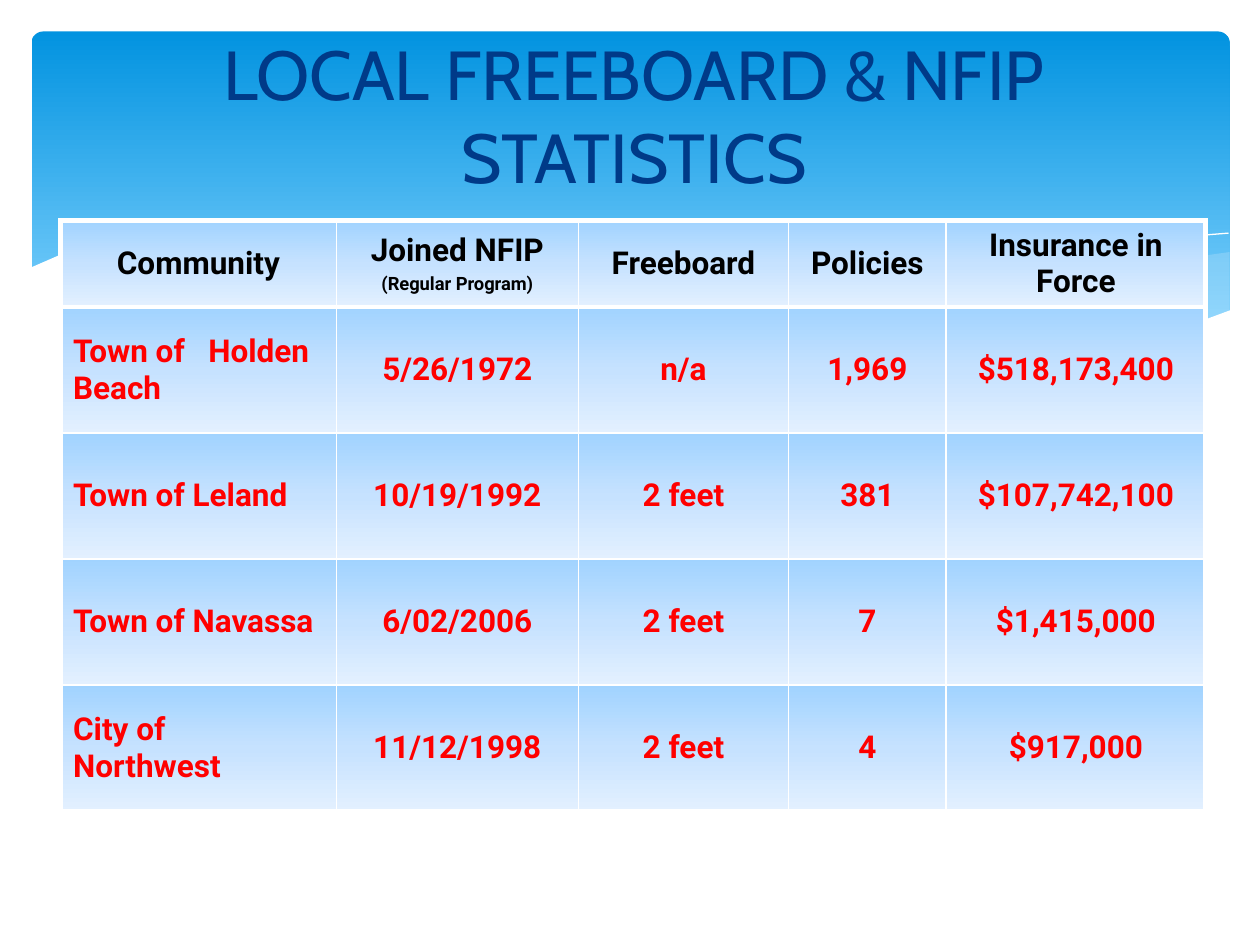
from dataclasses import dataclass
from lxml import etree
from pptx import Presentation
from pptx import util as u
from pptx.dml.color import RGBColor
from pptx.enum import shapes, text
from pptx.oxml import ns


@dataclass(frozen=True)
class Theme:
    white: str = "FFFFFF"
    wave: str = "C6E7FC"
    navy: str = "003A88"
    black: str = "000000"
    red: str = "FF0000"
    sky: tuple = ((0, "0293E0"), (90, "83D3FE"))
    ice: tuple = ((0, "A1D3FF"), (50, "C6E2FF"), (100, "E3F0FF"))
    head: str = "Cabin"
    body: str = "Roboto"
    big: float = 39.6
    mid: float = 18
    small: float = 10.5
    thin: float = 1
    thick: float = 3


def rgb(code):
    return RGBColor.from_string(code)


def apply(item, form):
    for key, val in form.items():
        setattr(item, key, val)


def sub(node, tag, **atts):
    return etree.SubElement(node, ns.qn(tag), **atts)


class Deck:
    def __init__(self, theme):
        self.theme = theme
        self.prs = Presentation()
        apply(self.prs, {"slide_width": u.Inches(10), "slide_height": u.Inches(7.5)})
        self.slide = self.prs.slides.add_slide(self.prs.slide_layouts[5])

    def shade(self, fill, node, stops):
        """Vertical gradient, top to bottom."""
        fill.gradient()
        fill.gradient_angle = 270
        box = node.find(".//" + ns.qn("a:gsLst"))
        for old in list(box):
            box.remove(old)
        for pos, code in stops:
            stop = sub(box, "a:gs", pos=str(pos * 1000))
            sub(stop, "a:srgbClr", val=code)

    def label(self, para, words, size, color, font, bold, align):
        run = para.add_run()
        run.text = words
        apply(run.font, {"size": u.Pt(size), "name": font, "bold": bold})
        run.font.color.rgb = rgb(color)
        para.alignment = align

    def panel(self, left, top, wide, high, round_, stops):
        item = self.slide.shapes.add_shape(
            shapes.MSO_SHAPE.ROUNDED_RECTANGLE,
            *map(u.Inches, (left, top, wide, high)))
        item.adjustments[0] = round_
        item.shadow.inherit = False
        item.line.fill.background()
        self.shade(item.fill, item._element, stops)

    def curve(self, points, fill=None, alpha=100):
        """Filled outline, or an open white hairline when fill is None."""
        dots = [(u.Inches(x), u.Inches(y)) for x, y in points]
        pen = self.slide.shapes.build_freeform(*dots[0])
        pen.add_line_segments(dots[1:], close=fill is not None)
        item = pen.convert_to_shape()
        item.shadow.inherit = False
        if fill is None:
            item.fill.background()
            item.line.color.rgb = rgb(self.theme.white)
            item.line.width = 0
            return
        item.line.fill.background()
        item.fill.solid()
        item.fill.fore_color.rgb = rgb(fill)
        if alpha < 100:
            tint = item._element.spPr.find(".//" + ns.qn("a:srgbClr"))
            sub(tint, "a:alpha", val=str(alpha * 1000))

    def title(self, words, left, top, wide, high):
        th, item = self.theme, self.slide.shapes.title
        apply(item, dict(zip(("left", "top", "width", "height"),
                             map(u.Inches, (left, top, wide, high)))))
        apply(item.text_frame, {"word_wrap": True,
                                "auto_size": text.MSO_AUTO_SIZE.NONE,
                                "vertical_anchor": text.MSO_ANCHOR.MIDDLE})
        para = item.text_frame.paragraphs[0]
        self.label(para, words, th.big, th.navy, th.head, False, text.PP_ALIGN.CENTER)
        para._p.get_or_add_pPr().set("marL", str(u.Inches(0.06)))
        # Bring the title in front of the backdrop
        self.slide.shapes._spTree.append(item._element)

    def edges(self, cell, widths):
        props = cell._tc.get_or_add_tcPr()
        for spot, (side, width) in enumerate(widths.items()):
            line = etree.Element(ns.qn("a:ln" + side), w=str(u.Pt(width)))
            sub(sub(line, "a:solidFill"), "a:srgbClr", val=self.theme.white)
            props.insert(spot, line)

    def table(self, rows, left, top, cols, highs):
        th = self.theme
        grid = self.slide.shapes.add_table(
            len(rows), len(cols),
            *map(u.Inches, (left, top, sum(cols), sum(highs)))).table
        apply(grid, {"first_row": False, "horz_banding": False})
        for col, wide in zip(grid.columns, cols):
            col.width = u.Inches(wide)
        for row, high in zip(grid.rows, highs):
            row.height = u.Inches(high)
        last, end = len(rows) - 1, len(cols) - 1
        for r, row in enumerate(rows):
            for c, words in enumerate(row):
                cell = grid.cell(r, c)
                cell.vertical_anchor = text.MSO_ANCHOR.MIDDLE
                self.shade(cell.fill, cell._tc, th.ice)
                # Heavy rules: outer frame and below the header
                heavy = {"L": c == 0, "R": c == end, "T": r < 2, "B": r in (0, last)}
                self.edges(cell, {k: th.thick if v else th.thin
                                  for k, v in heavy.items()})
                color = th.red if r else th.black
                align = text.PP_ALIGN.LEFT if r and not c else text.PP_ALIGN.CENTER
                for n, part in enumerate(words.split("\n")):
                    frame = cell.text_frame
                    para = frame.add_paragraph() if n else frame.paragraphs[0]
                    size = th.small if n else th.mid
                    para.space_before = u.Pt(size * 0.2)
                    self.label(para, part, size, color, th.body, True, align)


# Wave outlines, in inches
RIGHT = [(9.76, 2), (9.48, 2.04), (9.06, 2.13), (8.61, 2.23), (7.79, 2.42),
         (7.06, 2.57), (6.61, 2.65), (7.05, 2.71), (7.57, 2.76), (8.03, 2.78),
         (8.54, 2.76), (8.97, 2.7), (9.35, 2.62), (9.76, 2.47)]
BAND = [(8.93, 2.73), (8.37, 2.65), (7.75, 2.54), (7.06, 2.4), (6.29, 2.22),
        (5.69, 2.08), (5.14, 1.98), (4.65, 1.91), (4.2, 1.87), (3.8, 1.85),
        (3.28, 1.87), (2.86, 1.91), (3.42, 1.99), (4.04, 2.11), (4.91, 2.32),
        (5.66, 2.48), (6.34, 2.61), (6.95, 2.7), (7.48, 2.76), (8.07, 2.78),
        (8.57, 2.77), (8.93, 2.73)]
CREST = [(3.09, 1.95), (3.44, 1.9), (3.87, 1.87), (4.33, 1.87), (4.89, 1.9),
         (5.56, 1.97), (6.36, 2.08), (7.27, 2.26), (8.31, 2.51), (9.07, 2.72)]
RISE = [(6.13, 2.57), (6.72, 2.41), (7.48, 2.23), (8.36, 2.04), (8.95, 1.94),
        (9.38, 1.88), (9.75, 1.85)]
SHORE = [(9.77, 2.46), (9.5, 2.56), (9.1, 2.67), (8.63, 2.74), (8.09, 2.77),
         (7.44, 2.74), (6.68, 2.65), (5.79, 2.5), (4.75, 2.27), (3.91, 2.07),
         (3.16, 1.94), (2.5, 1.86), (1.93, 1.84), (1.46, 1.85), (1.06, 1.89),
         (0.76, 1.95), (0.46, 2.03), (0.23, 2.13), (0.23, 3.29), (9.77, 3.29)]

ROWS = [
    ("Community", "Joined NFIP\n(Regular Program)", "Freeboard", "Policies",
     "Insurance in Force"),
    ("Town of   Holden Beach", "5/26/1972", "n/a", "1,969", "$518,173,400"),
    ("Town of Leland", "10/19/1992", "2 feet", "381", "$107,742,100"),
    ("Town of Navassa", "6/02/2006", "2 feet", "7", "$1,415,000"),
    ("City of   Northwest", "11/12/1998", "2 feet", "4", "$917,000"),
]


def main():
    th = Theme()
    deck = Deck(th)
    # Backdrop
    deck.panel(0.25, 0.25, 9.51, 2.7, 0.034, th.sky)
    deck.curve(RIGHT, th.wave, 29)
    deck.curve(BAND, th.wave, 40)
    deck.curve(CREST)
    deck.curve(RISE)
    deck.curve(SHORE, th.white)
    # Content
    deck.title("LOCAL FREEBOARD & NFIP STATISTICS", 0.5, 0.28, 9, 1.25)
    deck.table(ROWS, 0.48, 1.75, (2.19, 1.92, 1.67, 1.25, 2.06), (0.62, 1, 1, 1, 1))
    deck.prs.save("out.pptx")


if __name__ == "__main__":
    main()
